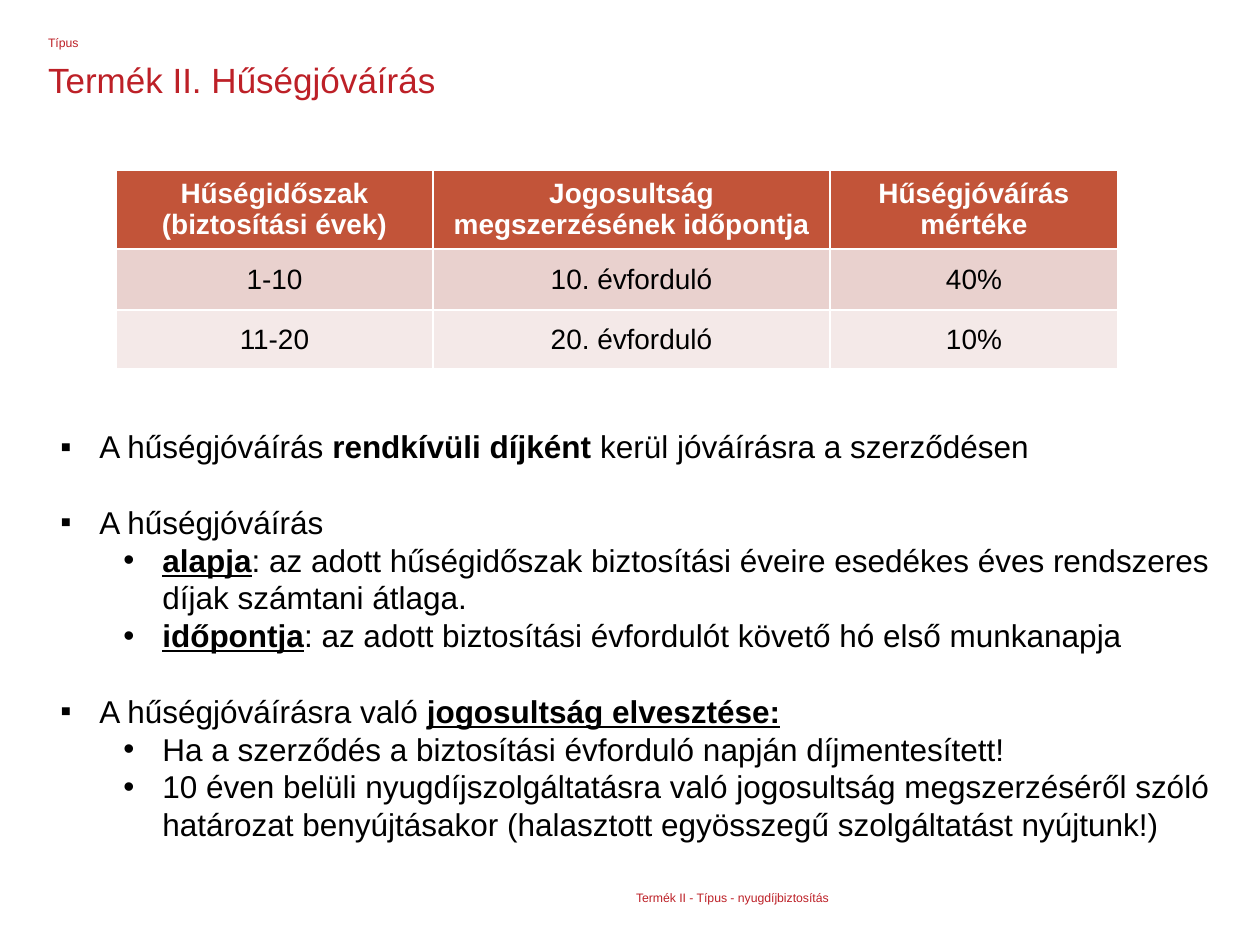
"""Build the loyalty bonus slide with its table and bullet list."""
from lxml.etree import SubElement
from pptx import Presentation
from pptx.dml.color import RGBColor
from pptx.enum.text import MSO_ANCHOR, PP_ALIGN
from pptx.oxml.ns import qn
from pptx.util import Pt

PIXEL = 914400 / 126
FONT = "Arial"
COLORS = {"brand": "BD2027", "ink": "000000", "white": "FFFFFF",
          "header": "C25439", "odd": "E9D1CE", "even": "F4E9E8"}

LABELS = [
    ("Termék II - Típus - nyugdíjbiztosítás", (636, 890, 400, 15), 7, None),
    ("Termék II. Hűségjóváírás", (48, 62, 1155, 77), 20, 22),
    ("Típus", (48, 38, 306, 16), 7, 7),
]

TABLE_PLACE = (116, 170)
COLUMN_WIDTHS = [317, 397, 288]
ROW_HEIGHTS = [79, 61, 59]
ROW_FILLS = ["header", "odd", "even"]
ROWS = [
    ["Hűségidőszak\n(biztosítási évek)", "Jogosultság megszerzésének időpontja",
     "Hűségjóváírás mértéke"],
    ["1-10", "10. évforduló", "40%"],
    ["11-20", "20. évforduló", "10%"],
]

PLAIN, BOLD, KEY = (False, False), (True, False), (True, True)
LIST_PLACE = (48, 421, 1212, 432)
LINE_POINTS = 21.6
BULLETS = [("▪", 39), ("•", 102)]
HANGING = 39
ITEMS = [
    (0, [("A hűségjóváírás ", PLAIN), ("rendkívüli díjként ", BOLD),
         ("kerül jóváírásra a szerződésen", PLAIN)]),
    (0, [("A hűségjóváírás", PLAIN)]),
    (1, [("alapja", KEY),
         (": az adott hűségidőszak biztosítási éveire esedékes éves rendszeres "
          "díjak számtani átlaga.", PLAIN)]),
    (1, [("időpontja", KEY),
         (": az adott biztosítási évfordulót követő hó első munkanapja", PLAIN)]),
    (0, [("A hűségjóváírásra való ", PLAIN), ("jogosultság elvesztése:", KEY)]),
    (1, [("Ha a szerződés a biztosítási évforduló napján díjmentesített!", PLAIN)]),
    (1, [("10 éven belüli nyugdíjszolgáltatásra való jogosultság megszerzéséről szóló "
          "határozat benyújtásakor (halasztott egyösszegű szolgáltatást nyújtunk!)",
          PLAIN)]),
]


def px(value):
    return round(value * PIXEL)


def style(font, size, color, bold=False, underline=False):
    font.name, font.size = FONT, Pt(size)
    font.bold, font.underline = bold, underline
    font.color.rgb = RGBColor.from_string(COLORS[color])


def add_frame(page, place):
    frame = page.shapes.add_textbox(*map(px, place)).text_frame
    frame.word_wrap = True
    return frame


def add_label(page, text, place, size, line_points):
    frame = add_frame(page, place)
    frame.margin_left = frame.margin_top = frame.margin_right = frame.margin_bottom = 0
    frame.text = text
    para = frame.paragraphs[0]
    if line_points:
        para.line_spacing = Pt(line_points)
    style(para.runs[0].font, size, "brand")


def add_borders(cell):
    properties = cell._tc.get_or_add_tcPr()
    for position, side in enumerate(("lnL", "lnR", "lnT", "lnB")):
        line = SubElement(properties, qn(f"a:{side}"), w=str(Pt(1)))
        fill = SubElement(line, qn("a:solidFill"))
        SubElement(fill, qn("a:srgbClr"), val=COLORS["white"])
        properties.insert(position, line)


def add_bonus_table(page):
    size = (sum(COLUMN_WIDTHS), sum(ROW_HEIGHTS))
    table = page.shapes.add_table(
        len(ROWS), len(COLUMN_WIDTHS), *map(px, TABLE_PLACE + size)).table
    for column, width in zip(table.columns, COLUMN_WIDTHS):
        column.width = px(width)
    for row, height, fill, texts in zip(table.rows, ROW_HEIGHTS, ROW_FILLS, ROWS):
        row.height = px(height)
        is_header = fill == "header"
        for cell, text in zip(row.cells, texts):
            cell.text = text
            cell.vertical_anchor = MSO_ANCHOR.MIDDLE
            cell.margin_left = cell.margin_right = px(6)
            cell.margin_top = cell.margin_bottom = 0
            cell.fill.solid()
            cell.fill.fore_color.rgb = RGBColor.from_string(COLORS[fill])
            add_borders(cell)
            for para in cell.text_frame.paragraphs:
                para.alignment = PP_ALIGN.CENTER
                for span in para.runs:
                    style(span.font, 16, "white" if is_header else "ink", is_header)


def add_list(page):
    frame = add_frame(page, LIST_PLACE)
    for index, (level, spans) in enumerate(ITEMS):
        para = frame.add_paragraph() if index else frame.paragraphs[0]
        mark, indent = BULLETS[level]
        para.level = level
        para.line_spacing = Pt(LINE_POINTS)
        if index and level == 0:
            para.space_before = Pt(LINE_POINTS)
        properties = para._p.get_or_add_pPr()
        properties.set("marL", str(px(indent)))
        properties.set("indent", str(px(-HANGING)))
        SubElement(properties, qn("a:buFont"), typeface=FONT)
        SubElement(properties, qn("a:buChar"), char=mark)
        for text, (bold, underline) in spans:
            span = para.add_run()
            span.text = text
            style(span.font, 18, "ink", bold, underline)


def main():
    deck = Presentation()
    deck.slide_width, deck.slide_height = px(1260), px(945)
    page = deck.slides.add_slide(deck.slide_layouts[6])
    for label in LABELS:
        add_label(page, *label)
    add_list(page)
    add_bonus_table(page)
    deck.save("out.pptx")


if __name__ == "__main__":
    main()
